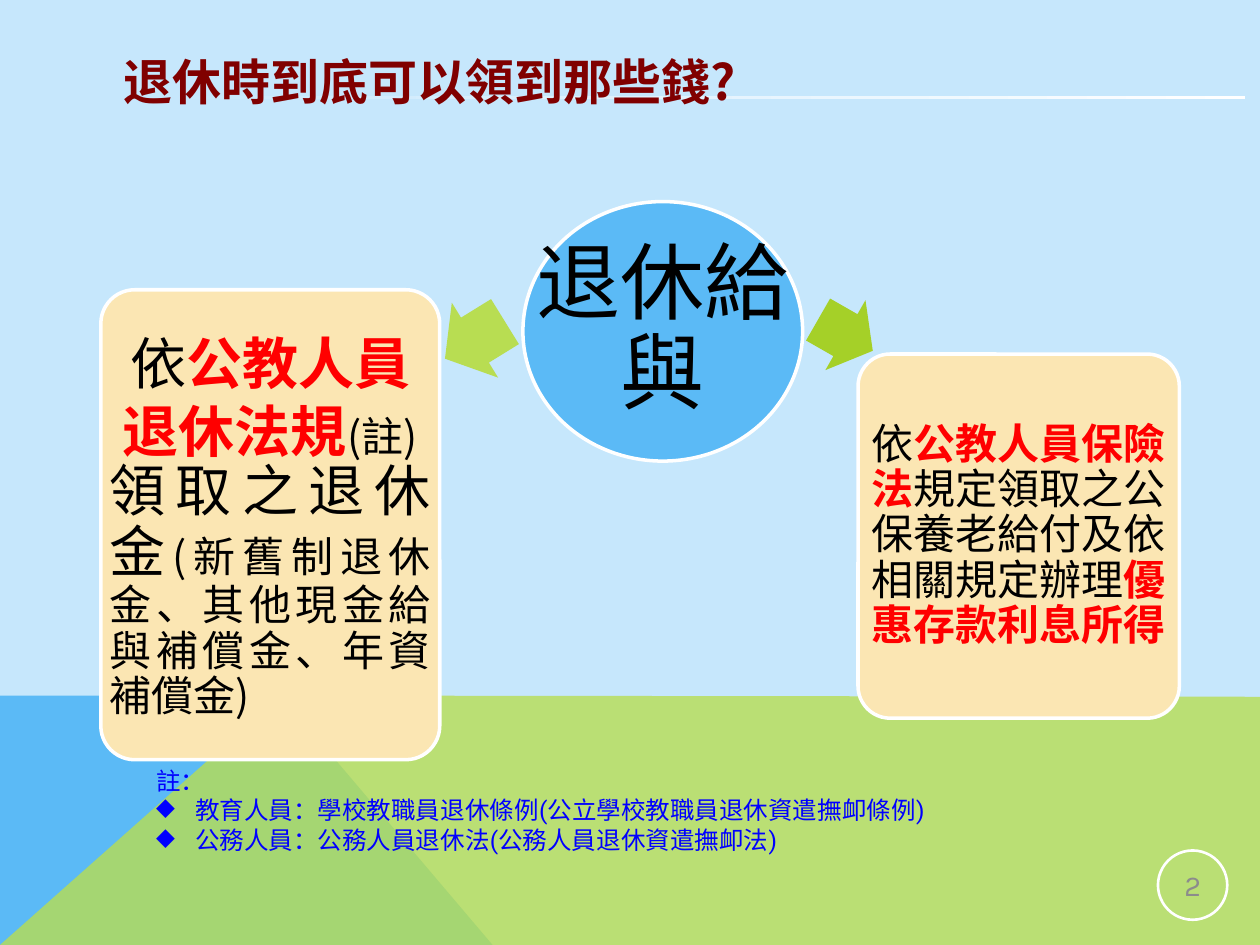
from typing import NamedTuple

from lxml.etree import SubElement
from pptx import Presentation
from pptx.dml.color import RGBColor
from pptx.enum.shapes import MSO_SHAPE as Preset
from pptx.enum.text import MSO_ANCHOR as Anchor, MSO_AUTO_SIZE as AutoSize, PP_ALIGN as Align
from pptx.oxml.ns import qn
from pptx.util import Inches, Pt

CELL = Inches(0.1)  # the slide is a grid of 100 columns by 75 rows
COLUMNS, ROWS = 100, 75
HORIZON = 55.2

SKY = RGBColor(0xC6, 0xE7, 0xFC)
BLUE = RGBColor(0x5B, 0xBA, 0xF6)
LIME = RGBColor(0xB8, 0xDD, 0x52)
GREEN = RGBColor(0xA5, 0xD0, 0x28)
CREAM = RGBColor(0xFB, 0xE6, 0xB3)
WHITE = RGBColor(0xFF, 0xFF, 0xFF)
BLACK = RGBColor(0, 0, 0)
RED = RGBColor(0xFF, 0, 0)
MAROON = RGBColor(0x80, 0, 0)
NOTE_BLUE = RGBColor(0, 0, 0xFF)
GREY = RGBColor(0x8C, 0x8C, 0x8C)
CJK = "Noto Sans CJK SC"


class Box(NamedTuple):
    left: float
    top: float
    width: float
    height: float

    def inner(self, left, top, width, height):
        return Box(self.left + left, self.top + top, width, height)

    def lengths(self):
        return [round(cells * CELL) for cells in self]


def add_preset(page, preset, box, fill=None, line_width=None):
    shape = page.shapes.add_shape(preset, *box.lengths())
    style(shape, fill, line_width)
    return shape


def style(shape, fill, line_width=None):
    shape.shadow.inherit = False
    if fill is None:
        shape.fill.background()
    else:
        shape.fill.solid()
        shape.fill.fore_color.rgb = fill
    if line_width is None:
        shape.line.fill.background()
    else:
        shape.line.color.rgb = WHITE
        shape.line.width = Pt(line_width)


def add_run(para, text, size, color, font=CJK, bold=False):
    span = para.add_run()
    span.text = text
    span.font.name = font
    span.font.size = Pt(size)
    span.font.bold = bold
    span.font.color.rgb = color
    SubElement(span.font._element, qn("a:ea"), typeface=font)


def set_frame(frame, inset, anchor=Anchor.MIDDLE):
    frame.word_wrap = True
    frame.vertical_anchor = anchor
    frame.margin_left = frame.margin_right = Inches(inset)
    frame.margin_top = frame.margin_bottom = Inches(inset)


def add_label(page, box, inset, paragraphs):
    """Each paragraph is (alignment, line spacing, points after, runs)."""
    frame = page.shapes.add_textbox(*box.lengths()).text_frame
    set_frame(frame, inset)
    for index, (align, spacing, after, runs) in enumerate(paragraphs):
        para = frame.add_paragraph() if index else frame.paragraphs[0]
        para.alignment = align
        para.line_spacing = spacing
        para.space_after = Pt(after)
        for run in runs:
            add_run(para, *run)


def add_polygon(page, points, fill):
    corners = [(round(x * CELL), round(y * CELL)) for x, y in points]
    builder = page.shapes.build_freeform(*corners[0], scale=1.0)
    builder.add_line_segments(corners[1:], close=True)
    shape = builder.convert_to_shape()
    style(shape, fill)
    return shape


def add_scenery(page, box):
    page.background.fill.solid()
    page.background.fill.fore_color.rgb = SKY
    bottom, right, ridge = box.top + box.height, box.left + box.width, box.left + 22.3
    add_polygon(page, [(box.left, bottom), (box.left, box.top),
                       (ridge, box.top), (box.left + 39.1, bottom)], BLUE)
    meadow = add_polygon(page, [(box.left, bottom), (ridge, box.top),
                                (right, box.top + 0.1), (right, bottom)], LIME)
    color = meadow.element.spPr.find(qn("a:solidFill"))[0]
    SubElement(color, qn("a:alpha"), val="80000")


def add_title(page, box):
    rule = add_preset(page, Preset.RECTANGLE, box.inner(2.3, 0.5, 87.7, 0.3), WHITE)
    rule.fill.gradient()
    rule.fill.gradient_angle = 0
    for stop, color in zip(rule.fill.gradient_stops, (SKY, WHITE)):
        stop.color.rgb = color
    title = page.shapes.title
    title.left, title.top, title.width, title.height = box.lengths()
    frame = title.text_frame
    frame.auto_size = AutoSize.NONE
    frame.vertical_anchor = Anchor.MIDDLE
    para = frame.paragraphs[0]
    para.alignment = Align.LEFT
    add_run(para, "退休時到底可以領到那些錢?", 28, MAROON, bold=True)
    para.add_line_break()
    page.shapes.element.append(title.element)  # in front of the rule


def add_arrow(page, box, rotation, fill):
    arrow = add_preset(page, Preset.LEFT_ARROW, box, fill)
    arrow.adjustments[0], arrow.adjustments[1] = 0.6, 0.5
    arrow.rotation = rotation


def add_card(page, box, inset, paragraphs):
    card = add_preset(page, Preset.ROUNDED_RECTANGLE, box, CREAM, 2)
    card.adjustments[0] = 0.1
    add_label(page, box, inset, paragraphs)


def add_diagram(page, box):
    hub = box.inner(33.5, 0, 22.2, 20.6)
    add_preset(page, Preset.OVAL, hub, BLUE, 2)
    add_label(page, hub, 0.03, [
        (Align.CENTER, 0.9, 16.8, [("退休給與", 48, BLACK)])])
    add_arrow(page, box.inner(26.9, 7.5, 5.6, 7), 328.3, LIME)
    add_card(page, box.inner(0, 7, 26.9, 37.3), 0.07, [
        (Align.CENTER, 1.0, 0, [("依", 32, BLACK),
                                ("公教人員退休法規", 32, RED, CJK, True),
                                ("(註)", 24, BLACK)]),
        (Align.JUSTIFY, 0.9, 8.4, [
            ("領取之退休金", 32, BLACK),
            ("(新舊制退休金、其他現金給與補償金、年資補償金)", 24, BLACK)])])
    add_arrow(page, box.inner(56.6, 7.4, 5, 6.4), 209.8, GREEN)
    add_card(page, box.inner(60.1, 12.1, 25.5, 28.9), 0.05, [
        (Align.CENTER, 0.9, 8.4, [
            ("依", 24, BLACK), ("公教人員保險法", 24, RED, CJK, True),
            ("規定領取之公保養老給付及依相關規定辦理", 24, BLACK),
            ("優惠存款利息所得", 24, RED, CJK, True)])])


def add_notes(page, box):
    frame = page.shapes.add_textbox(*box.lengths()).text_frame
    frame.word_wrap = True
    lines = ["註：",
             "教育人員：學校教職員退休條例(公立學校教職員退休資遣撫卹條例)",
             "公務人員：公務人員退休法(公務人員退休資遣撫卹法)"]
    for index, line in enumerate(lines):
        para = frame.add_paragraph() if index else frame.paragraphs[0]
        para.alignment = Align.JUSTIFY
        add_run(para, line, 14, NOTE_BLUE, "Roboto")
        if index:
            props = para._p.get_or_add_pPr()
            props.set("marL", str(Inches(0.31)))
            props.set("indent", str(-Inches(0.31)))
            SubElement(props, qn("a:buChar"), char="◆")


def add_page_number(page, box):
    badge = add_preset(page, Preset.OVAL, box, line_width=1.5)
    set_frame(badge.text_frame, 0.01)
    para = badge.text_frame.paragraphs[0]
    para.alignment = Align.CENTER
    add_run(para, "2", 16.5, GREY, "Karla")


def main():
    deck = Presentation()
    deck.slide_width, deck.slide_height = COLUMNS * CELL, ROWS * CELL
    page = deck.slides.add_slide(deck.slide_layouts[5])
    add_scenery(page, Box(0, HORIZON, COLUMNS, ROWS - HORIZON))
    add_title(page, Box(8.8, 7.1, 82.2, 6))
    add_diagram(page, Box(8, 16, 85.6, 44.3))
    add_notes(page, Box(11.4, 60.3, 77.1, 10.1))
    add_page_number(page, Box(91.9, 67.5, 5.5, 5.5))
    deck.save("out.pptx")


if __name__ == "__main__":
    main()
